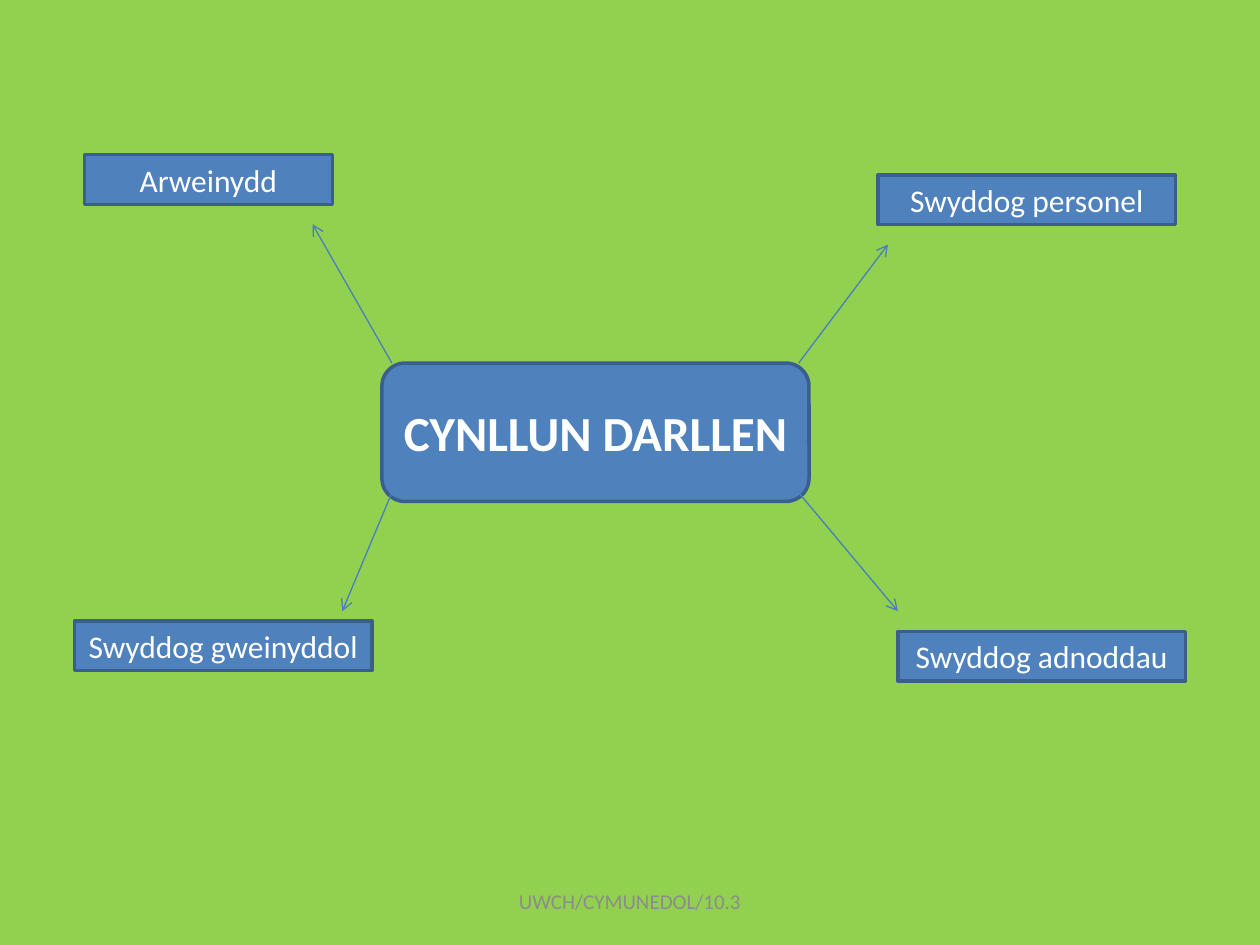
from dataclasses import dataclass

from lxml import etree
from pptx import Presentation
from pptx import util as u
from pptx.dml.color import RGBColor
from pptx.enum import shapes, text
from pptx.oxml import ns

GREEN = RGBColor(0x92, 0xD0, 0x50)
BLUE = RGBColor(0x4F, 0x81, 0xBD)
BORDER = RGBColor(0x3A, 0x5F, 0x8C)
ARROW = RGBColor(0x4B, 0x7E, 0xBC)
WHITE = RGBColor(0xFF, 0xFF, 0xFF)
GREY = RGBColor(0x8C, 0x8C, 0x8C)

ROLE_HEIGHT = 1
LEFT_X, RIGHT_X = 7.9, 16.1
TOP_Y, BOTTOM_Y = 7.32, 9.93


@dataclass
class Role:
    name: str
    left: float
    top: float
    width: float
    arrow_start: tuple[float, float]
    arrow_end: tuple[float, float]


ROLES = [
    Role("Arweinydd", 1.7, 3.12, 5, (LEFT_X, TOP_Y), (6.3, 4.52)),
    Role("Swyddog personel", 17.7, 3.53, 6, (RIGHT_X, TOP_Y), (17.9, 4.93)),
    Role("Swyddog adnoddau", 18.1, 12.73, 5.8, (RIGHT_X, BOTTOM_Y), (18.1, 12.32)),
    Role("Swyddog gweinyddol", 1.5, 12.52, 6, (LEFT_X, BOTTOM_Y), (6.9, 12.32)),
]


def write(sp, content: str, *, size: float, color: RGBColor = WHITE, bold: bool = False) -> None:
    tf = sp.text_frame
    tf.word_wrap = True
    tf.vertical_anchor = text.MSO_ANCHOR.MIDDLE
    p = tf.paragraphs[0]
    p.alignment = text.PP_ALIGN.CENTER
    r = p.add_run()
    r.text = content
    r.font.name = "Calibri"
    r.font.size = u.Pt(size)
    r.font.bold = bold
    r.font.color.rgb = color


def add_box(s, kind, left: float, top: float, width: float, height: float):
    sp = s.shapes.add_shape(kind, u.Cm(left), u.Cm(top), u.Cm(width), u.Cm(height))
    sp.shadow.inherit = False
    sp.fill.solid()
    sp.fill.fore_color.rgb = BLUE
    sp.line.color.rgb = BORDER
    sp.line.width = u.Pt(2)
    return sp


def add_arrow(s, start: tuple[float, float], end: tuple[float, float]) -> None:
    points = [u.Cm(v) for v in (*start, *end)]
    cxn = s.shapes.add_connector(shapes.MSO_CONNECTOR.STRAIGHT, *points)
    cxn.line.color.rgb = ARROW
    cxn.line.width = u.Pt(0.75)
    etree.SubElement(cxn.line._get_or_add_ln(), ns.qn("a:tailEnd"), type="arrow")
    etree.SubElement(cxn._element.spPr, ns.qn("a:effectLst"))


def main() -> None:
    prs = Presentation()
    prs.slide_width, prs.slide_height = u.Cm(25.4), u.Cm(19.05)
    s = prs.slides.add_slide(prs.slide_layouts[6])
    s.background.fill.solid()
    s.background.fill.fore_color.rgb = GREEN

    plan = add_box(s, shapes.MSO_SHAPE.ROUNDED_RECTANGLE, 7.7, 7.32, 8.61, 2.79)
    write(plan, "CYNLLUN DARLLEN", size=28, bold=True)

    for role in ROLES:
        sp = add_box(s, shapes.MSO_SHAPE.RECTANGLE, role.left, role.top, role.width, ROLE_HEIGHT)
        write(sp, role.name, size=18)
        add_arrow(s, role.arrow_start, role.arrow_end)

    footer = s.shapes.add_textbox(u.Cm(8.68), u.Cm(17.65), u.Cm(8.04), u.Cm(1.02))
    write(footer, "UWCH/CYMUNEDOL/10.3", size=12, color=GREY)

    prs.save("out.pptx")


if __name__ == "__main__":
    main()
